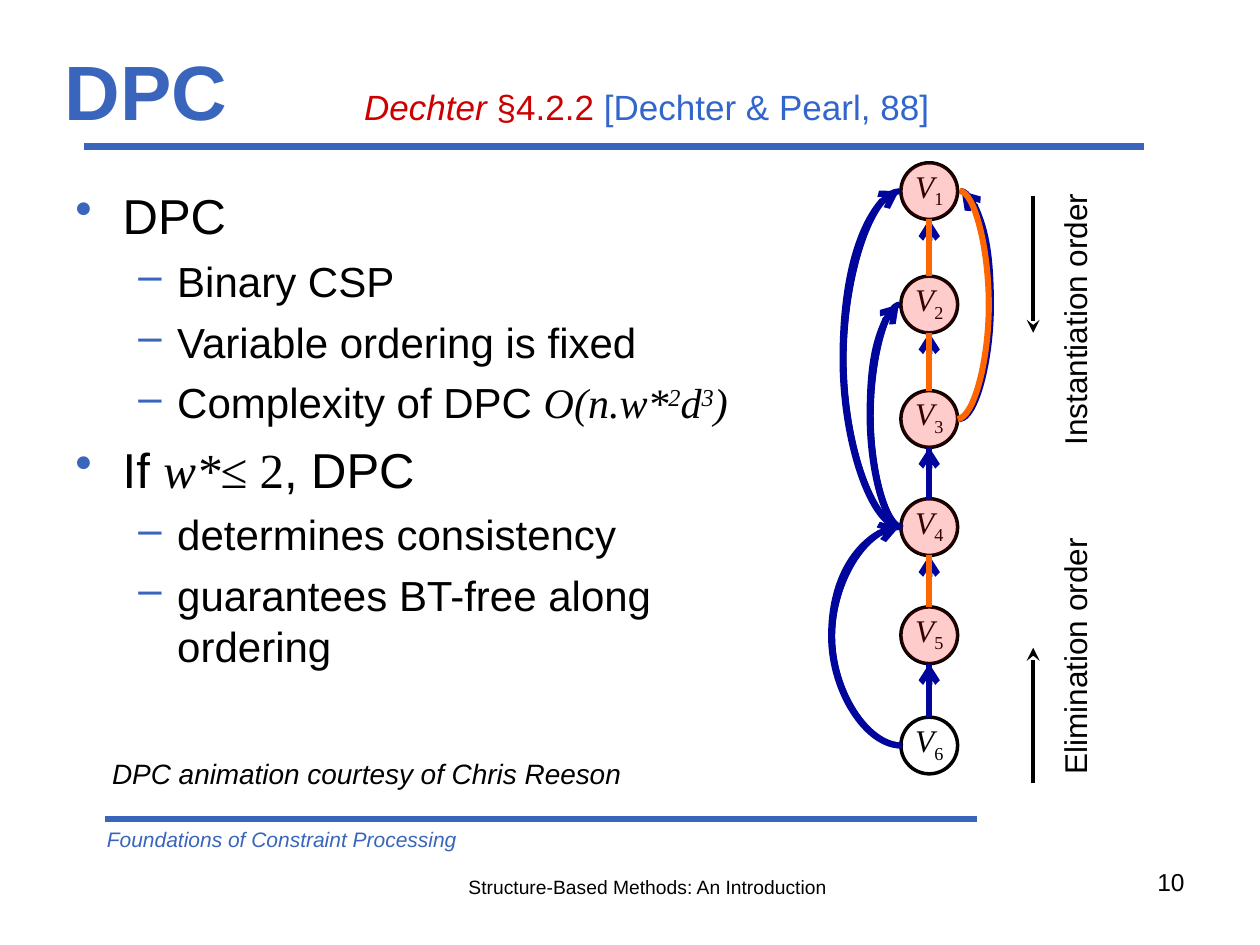
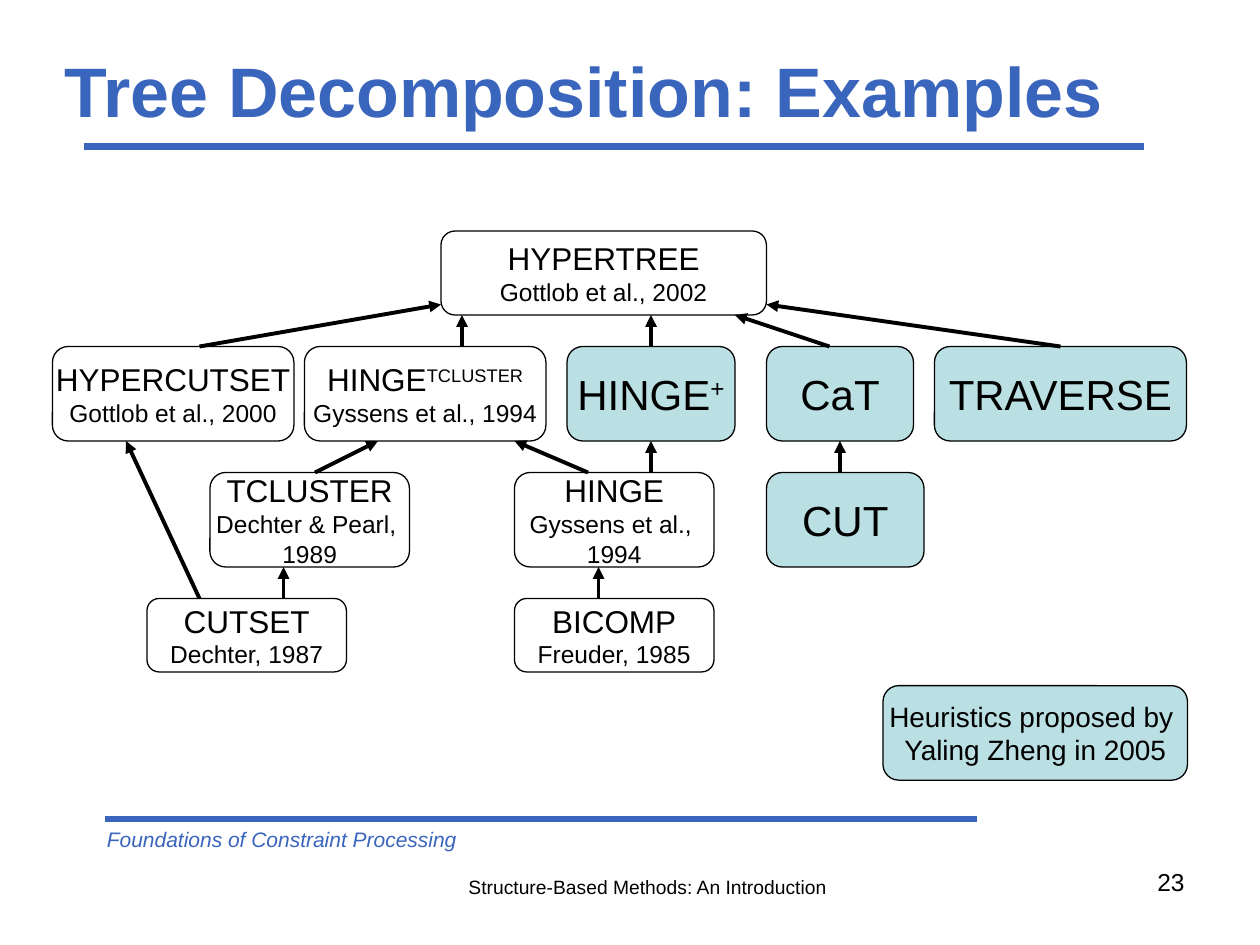
from dataclasses import dataclass, field
from typing import NamedTuple, Optional

from lxml.etree import SubElement
from pptx import Presentation
from pptx.dml.color import RGBColor
from pptx.enum.shapes import MSO_CONNECTOR, MSO_SHAPE
from pptx.enum.text import MSO_ANCHOR, PP_ALIGN
from pptx.oxml.ns import qn
from pptx.util import Emu, Pt

EMU_PER_PX = 7620


def px(length: int) -> Emu:
    return Emu(length * EMU_PER_PX)


@dataclass(frozen=True)
class Theme:
    blue: str = "3A65BC"
    citation: str = "3366CC"
    red: str = "CC0000"
    black: str = "000000"
    white: str = "FFFFFF"
    navy: str = "00059B"
    orange: str = "FF6600"
    tint: str = "FF0000"
    teal: str = "BBE0E3"
    sans: str = "Arial"
    serif: str = "Times New Roman"
    title: int = 44
    long_title: int = 40
    topic: int = 28
    detail: int = 24
    reference: int = 20
    label: int = 18
    note: int = 16
    small: int = 14
    footer: int = 12
    talk: int = 11


THEME = Theme()
MATH = {"name": THEME.serif, "italic": True}


class Box(NamedTuple):
    left: int
    top: int
    width: int
    height: int

    def emu(self) -> list[Emu]:
        return [px(length) for length in self]


class Point(NamedTuple):
    x: int
    y: int


@dataclass
class Run:
    text: str
    size: int
    look: dict = field(default_factory=dict)
    color: str = THEME.black
    baseline: int = 0


@dataclass
class Para:
    runs: list[Run]
    align: PP_ALIGN = PP_ALIGN.LEFT
    before: int = 0
    bullet: str = ""
    margin: int = 0
    hang: int = 0
    tab: int = 0


class Method(NamedTuple):
    box: Box
    paras: list[Para]
    fill: Optional[str] = None


class Edge(NamedTuple):
    lower: int
    upper: int
    bulge: int = 0


class Layer(NamedTuple):
    color: str
    width: float
    head: str
    outward: int
    edges: list[Edge]


def apply(target, values: dict) -> None:
    for name, value in values.items():
        setattr(target, name, value)


def write(frame, paras: list[Para], **layout) -> None:
    apply(frame, {"word_wrap": True} | layout)
    for index, para in enumerate(paras):
        line = frame.add_paragraph() if index else frame.paragraphs[0]
        props = line._p.get_or_add_pPr()
        if para.bullet:
            props.set("marL", str(px(para.margin)))
            props.set("indent", str(px(-para.hang)))
            bullet_color = SubElement(props, qn("a:buClr"))
            SubElement(bullet_color, qn("a:srgbClr")).set("val", THEME.blue)
            SubElement(props, qn("a:buChar")).set("char", para.bullet)
        if para.tab:
            stop = SubElement(SubElement(props, qn("a:tabLst")), qn("a:tab"))
            stop.set("pos", str(px(para.tab)))
            stop.set("algn", "l")
        line.alignment = para.align
        if para.before and index:
            line.space_before = Pt(para.before)
        for run in para.runs:
            piece = line.add_run()
            piece.text = run.text
            apply(piece.font, {"name": THEME.sans, "size": Pt(run.size)} | run.look)
            piece.font.color.rgb = RGBColor.from_string(run.color)
            if run.baseline:
                piece._r.get_or_add_rPr().set("baseline", str(run.baseline * 1000))


def add_text(slide, box: Box, paras: list[Para], rotation: int = 0, **layout) -> None:
    area = slide.shapes.add_textbox(*box.emu())
    area.rotation = rotation
    write(area.text_frame, paras, **layout)


def add_figure(slide, kind: MSO_SHAPE, box: Box, fill: Optional[str], outline: float = 0, alpha: int = 100):
    figure = slide.shapes.add_shape(kind, *box.emu())
    figure.shadow.inherit = False
    if fill:
        figure.fill.solid()
        figure.fill.fore_color.rgb = RGBColor.from_string(fill)
    else:
        figure.fill.background()
    if alpha < 100:
        tone = figure._element.spPr.find(qn("a:solidFill")).find(qn("a:srgbClr"))
        SubElement(tone, qn("a:alpha")).set("val", str(alpha * 1000))
    if outline:
        figure.line.color.rgb = RGBColor.from_string(THEME.black)
        figure.line.width = Pt(outline)
    else:
        figure.line.fill.background()
    return figure


def add_line(slide, start: Point, end: Point, color: str, width: float, head: str = "", curve: bool = False):
    kind = MSO_CONNECTOR.CURVE if curve else MSO_CONNECTOR.STRAIGHT
    link = slide.shapes.add_connector(kind, px(start.x), px(start.y), px(end.x), px(end.y))
    link.line.color.rgb = RGBColor.from_string(color)
    link.line.width = Pt(width)
    if head:
        SubElement(link.line._get_or_add_ln(), qn("a:tailEnd")).set("type", head)
    SubElement(link._element.spPr, qn("a:effectLst"))
    return link


def add_arc(slide, low: Point, high: Point, bulge: int, layer: Layer) -> None:
    depth = 2
    style = (layer.color, layer.width, layer.head, True)
    if bulge > 0:
        arc = add_line(slide, low, Point(low.x + depth, high.y), *style)
    else:
        arc = add_line(slide, high, Point(high.x + depth, low.y), *style)
        arc._element.spPr.find(qn("a:xfrm")).set("rot", "10800000")
    guides = arc._element.spPr.find(qn("a:prstGeom")).get_or_add_avLst()
    guide = SubElement(guides, qn("a:gd"))
    guide.set("name", "adj1")
    guide.set("fmla", f"val {abs(bulge) * 100000 // depth}")


def new_slide(deck, title: list[Run], number: int, tab: int = 0):
    slide = deck.slides.add_slide(deck.slide_layouts[6])
    for left, right, y in ((80, 1090, 140), (100, 930, 780)):
        add_line(slide, Point(left, y), Point(right, y), THEME.blue, 4)
    course = Run("Foundations of Constraint Processing", THEME.footer, {"italic": True}, THEME.blue)
    talk = Run("Structure-Based Methods: An Introduction", THEME.talk)
    add_text(slide, Box(90, 781, 630, 36), [Para([course])])
    add_text(slide, Box(428, 828, 378, 35), [Para([talk], PP_ALIGN.CENTER)])
    add_text(slide, Box(860, 820, 280, 62), [Para([Run(str(number), THEME.small)], PP_ALIGN.RIGHT)])
    add_text(slide, Box(50, 40, 1114, 90), [Para(title, tab=tab)], vertical_anchor=MSO_ANCHOR.MIDDLE)
    return slide


def topic(*runs: Run) -> Para:
    return Para(list(runs), before=7, bullet="•", margin=45, hang=45)


def detail(*runs: Run) -> Para:
    return Para(list(runs), before=6, bullet="–", margin=97, hang=37)


def build_dpc(deck) -> None:
    slide = new_slide(deck, [
        Run("DPC \t", THEME.title, {"bold": True}, THEME.blue),
        Run("Dechter ", THEME.reference, {"italic": True}, THEME.red),
        Run("§4.2.2 ", THEME.reference, {}, THEME.red),
        Run("[Dechter & Pearl, 88]", THEME.reference, {}, THEME.citation),
    ], 10, tab=285)
    big, mid = THEME.topic, THEME.detail
    add_text(slide, Box(60, 171, 697, 468), [
        topic(Run("DPC", big)),
        detail(Run("Binary CSP", mid)),
        detail(Run("Variable ordering is fixed", mid)),
        detail(Run("Complexity of DPC ", mid), Run("O(n.w*", mid, MATH), Run("2", mid, MATH, baseline=30),
               Run("d", mid, MATH), Run("3", mid, MATH, baseline=30), Run(")", mid, MATH)),
        topic(Run("If ", big), Run("w*", big, MATH), Run("≤ 2", big, {"name": THEME.serif}), Run(", DPC", big)),
        detail(Run("determines consistency", mid)),
        detail(Run("guarantees BT-free along ordering", mid)),
    ])
    credit = Run("DPC animation courtesy of Chris Reeson", THEME.note, {"italic": True})
    add_text(slide, Box(95, 715, 636, 44), [Para([credit])])

    orders = (("Instantiation order", PP_ALIGN.RIGHT, 290, 187, 317),
              ("Elimination order", PP_ALIGN.LEFT, 584, 746, 617))
    for name, align, top, start, end in orders:
        add_text(slide, Box(882, top, 283, 48), [Para([Run(name, THEME.label)], align)],
                 rotation=270, vertical_anchor=MSO_ANCHOR.MIDDLE)
        add_line(slide, Point(984, start), Point(984, end), THEME.black, 2.5, "stealth")

    size = 54
    tops = (155, 263, 372, 475, 578, 683)
    variables = {number: Box(858, top, size, size) for number, top in enumerate(tops, 1)}
    for number, box in variables.items():
        node = add_figure(slide, MSO_SHAPE.OVAL, box, THEME.white, 2)
        name = [Run("V", THEME.label, MATH),
                Run(str(number), THEME.label, {"name": THEME.serif}, baseline=-25)]
        write(node.text_frame, [Para(name, PP_ALIGN.CENTER)], vertical_anchor=MSO_ANCHOR.MIDDLE,
              margin_left=0, margin_right=0, margin_top=0, margin_bottom=px(6))

    edges = [Edge(6, 5), Edge(6, 4, -67), Edge(5, 4), Edge(4, 3), Edge(4, 2, -30),
             Edge(4, 1, -56), Edge(3, 2), Edge(3, 1, 30), Edge(2, 1)]
    eliminated = [edge for edge in edges if edge[:2] not in ((5, 4), (2, 1))]
    induced = [edge for edge in edges if edge[:2] in ((5, 4), (3, 2), (3, 1), (2, 1))]

    def draw(layer: Layer) -> None:
        for edge in layer.edges:
            low, high = variables[edge.lower], variables[edge.upper]
            if edge.bulge:
                x = low.left + size + layer.outward if edge.bulge > 0 else low.left - layer.outward
                half = size // 2
                add_arc(slide, Point(x, low.top + half), Point(x, high.top + half), edge.bulge, layer)
            else:
                x = low.left + size // 2
                add_line(slide, Point(x, low.top), Point(x, high.top + size),
                         layer.color, layer.width, layer.head)

    draw(Layer(THEME.black, 2, "", 0, edges))
    for number in range(5, 0, -1):
        add_figure(slide, MSO_SHAPE.OVAL, variables[number], THEME.tint, alpha=20)
    draw(Layer(THEME.navy, 3.5, "arrow", 2, edges))
    draw(Layer(THEME.navy, 3.5, "", 1, eliminated))
    draw(Layer(THEME.orange, 3.5, "", 0, induced))


def cited(name: str, *source: str, power: str = "") -> list[Para]:
    heading = [Run(name, THEME.label)]
    if power:
        heading.append(Run(power, THEME.label, baseline=30))
    lines = [heading] + [[Run(line, THEME.small)] for line in source]
    return [Para(line, PP_ALIGN.CENTER) for line in lines]


def heuristic(name: str, *power: str) -> list[Para]:
    runs = [Run(name, THEME.detail)] + [Run(sign, THEME.detail, baseline=30) for sign in power]
    return [Para(runs, PP_ALIGN.CENTER)]


def side_middles(box: Box) -> list[Point]:
    center_x, center_y = box.left + box.width // 2, box.top + box.height // 2
    return [Point(center_x, box.top), Point(box.left, center_y),
            Point(center_x, box.top + box.height), Point(box.left + box.width, center_y)]


def build_tree(deck) -> None:
    heading = Run("Tree Decomposition: Examples", THEME.long_title, {"bold": True}, THEME.blue)
    slide = new_slide(deck, [heading], 23)
    legend = [Para([Run(line, THEME.note)], PP_ALIGN.CENTER)
              for line in ("Heuristics proposed by ", "Yaling Zheng in 2005")]
    methods = [
        Method(Box(420, 220, 310, 80), cited("HYPERTREE", "Gottlob et al., 2002")),
        Method(Box(50, 330, 230, 90), cited("HYPERCUTSET", "Gottlob et al., 2000")),
        Method(Box(290, 330, 230, 90), cited("HINGE", "Gyssens et al., 1994", power="TCLUSTER")),
        Method(Box(540, 330, 160, 90), heuristic("HINGE", "+"), THEME.teal),
        Method(Box(730, 330, 140, 90), heuristic("CaT"), THEME.teal),
        Method(Box(890, 330, 240, 90), heuristic("TRAVERSE"), THEME.teal),
        Method(Box(200, 450, 190, 90), cited("TCLUSTER", "Dechter & Pearl, ", "1989")),
        Method(Box(490, 450, 190, 90), cited("HINGE", "Gyssens et al., ", "1994")),
        Method(Box(730, 450, 150, 90), heuristic("CUT"), THEME.teal),
        Method(Box(140, 570, 190, 70), cited("CUTSET", "Dechter, 1987")),
        Method(Box(490, 570, 190, 70), cited("BICOMP", "Freuder, 1985")),
        Method(Box(841, 653, 290, 90), legend, THEME.teal),
    ]
    joints = {}
    for method in methods:
        card = add_figure(slide, MSO_SHAPE.ROUNDED_RECTANGLE, method.box, method.fill, 0.75)
        write(card.text_frame, method.paras, word_wrap=False, vertical_anchor=MSO_ANCHOR.MIDDLE)
        for site, point in enumerate(side_middles(method.box)):
            joints[point] = (card, site)

    generalizations = (
        (190, 330, 420, 290), (440, 330, 440, 300), (620, 330, 620, 300), (790, 330, 700, 300),
        (1010, 330, 730, 290), (300, 450, 360, 420), (560, 450, 490, 420), (620, 450, 620, 420),
        (800, 450, 800, 420), (190, 570, 120, 420), (270, 570, 270, 540), (570, 570, 570, 540),
    )
    for x1, y1, x2, y2 in generalizations:
        start, end = Point(x1, y1), Point(x2, y2)
        arrow = add_line(slide, start, end, THEME.black, 2.25, "triangle")
        if start in joints:
            arrow.begin_connect(*joints[start])
        if end in joints:
            arrow.end_connect(*joints[end])


def main() -> None:
    deck = Presentation()
    apply(deck, {"slide_width": px(1200), "slide_height": px(900)})
    build_dpc(deck)
    build_tree(deck)
    deck.save("out.pptx")


if __name__ == "__main__":
    main()
